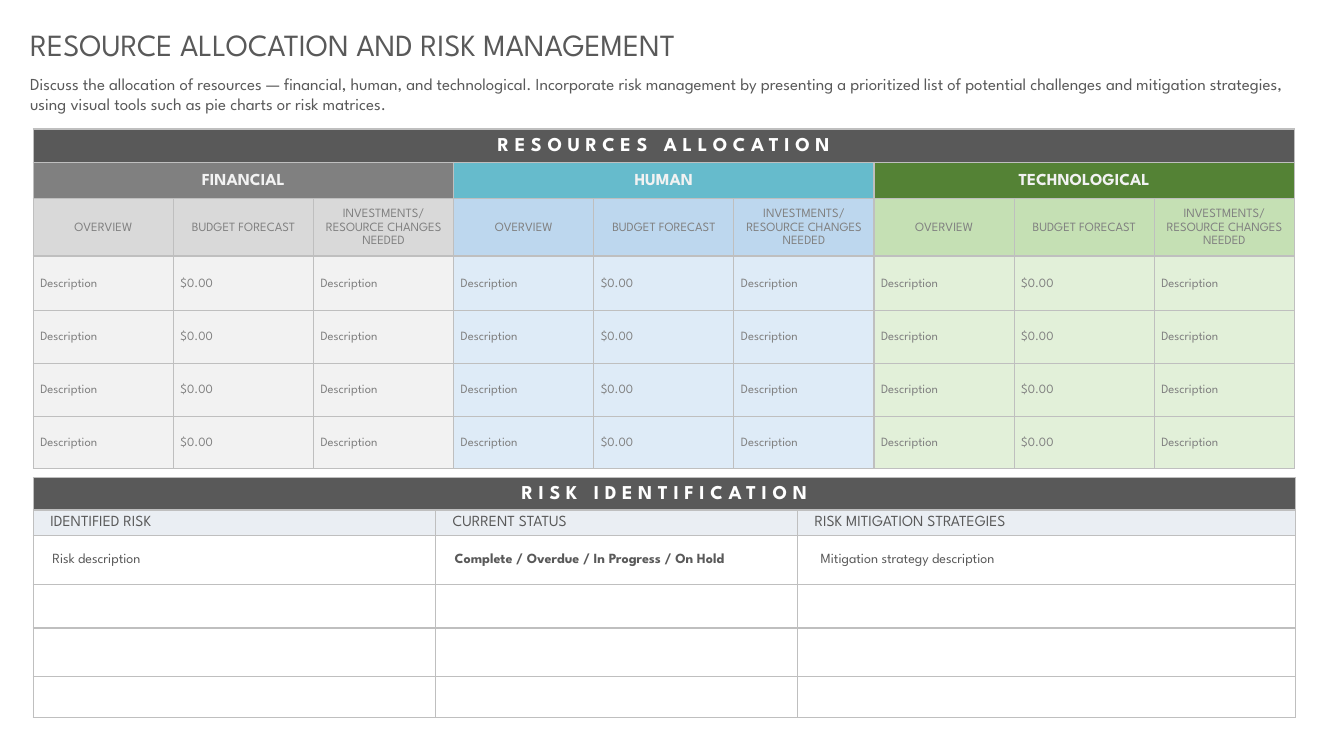
"""Build the resource allocation and risk management slide."""
from lxml.etree import SubElement
from pptx import Presentation
from pptx.dml.color import RGBColor
from pptx.enum.text import MSO_ANCHOR, PP_ALIGN
from pptx.oxml.ns import qn
from pptx.util import Pt

LEFT, CENTER = PP_ALIGN.LEFT, PP_ALIGN.CENTER
TOP, MIDDLE = MSO_ANCHOR.TOP, MSO_ANCHOR.MIDDLE
PX = 9144
FACE = "League Spartan"
DARK = RGBColor(0x59, 0x59, 0x59)
GRAY = RGBColor(0x80, 0x80, 0x80)
SILVER = RGBColor(0xD9, 0xD9, 0xD9)
PALE = RGBColor(0xF2, 0xF2, 0xF2)
TEAL = RGBColor(0x66, 0xBB, 0xCC)
BLUE = RGBColor(0xBD, 0xD7, 0xEE)
ICE = RGBColor(0xDE, 0xEB, 0xF7)
GREEN = RGBColor(0x54, 0x82, 0x35)
LEAF = RGBColor(0xC5, 0xE0, 0xB4)
MINT = RGBColor(0xE2, 0xF0, 0xD9)
MIST = RGBColor(0xEA, 0xEE, 0xF3)
RULE = RGBColor(0xBF, 0xBF, 0xBF)
WHITE = RGBColor(0xFF, 0xFF, 0xFF)

TITLE = "RESOURCE ALLOCATION AND RISK MANAGEMENT"
INTRO = (
    "Discuss the allocation of resources — financial, human, and technological. "
    "Incorporate risk management by presenting a prioritized list of potential "
    "challenges and mitigation strategies, using visual tools such as pie charts "
    "or risk matrices."
)
GROUPS = [
    ("FINANCIAL", GRAY, SILVER, PALE),
    ("HUMAN", TEAL, BLUE, ICE),
    ("TECHNOLOGICAL", GREEN, LEAF, MINT),
]
FIELDS = [
    ("OVERVIEW", "Description"),
    ("BUDGET FORECAST", "$0.00"),
    ("INVESTMENTS/\nRESOURCE CHANGES NEEDED", "Description"),
]
RISKS = [
    ("IDENTIFIED RISK", "Risk description", False, 14),
    ("CURRENT STATUS", "Complete / Overdue / In Progress / On Hold", True, 14),
    ("RISK MITIGATION STRATEGIES", "Mitigation strategy description", False, 18),
]
ASSET_COLS = [139] * 9
ASSET_ROWS = [33, 36, 57, 54, 53, 52, 52]
RISK_COLS = [399, 359, 494]
RISK_ROWS = [32, 25, 49, 43, 48, 41]


def write(frame, text, size=9, color=DARK, bold=False, align=LEFT,
          lead=None, track=0, indent=0):
    """Put formatted text in a text frame."""
    para = frame.paragraphs[0]
    para.text = text
    para.alignment = align
    if lead:
        para.line_spacing = lead
    if indent:
        para._p.get_or_add_pPr().set("indent", str(indent * PX))
    for run in para.runs:
        font = run.font
        font.name, font.size, font.bold = FACE, Pt(size), bold
        font.color.rgb = color
        if track:
            font._element.set("spc", str(track * 100))
    for gap in para._p.findall(qn("a:br")):
        SubElement(gap, qn("a:rPr"), sz=str(size * 100))


def place(shape, left, top, width, height, anchor):
    """Set the bounds and wrapping of a text shape."""
    shape.left, shape.top = left * PX, top * PX
    shape.width, shape.height = width * PX, height * PX
    frame = shape.text_frame
    frame.word_wrap = True
    frame.vertical_anchor = anchor
    return frame


def edge(cell):
    """Draw thin lines on all four sides of a cell."""
    props = cell._tc.get_or_add_tcPr()
    for side in ("a:lnL", "a:lnR", "a:lnT", "a:lnB"):
        line = SubElement(props, qn(side), w=str(Pt(1)))
        fill = SubElement(line, qn("a:solidFill"))
        SubElement(fill, qn("a:srgbClr"), val=str(RULE))


def grid(slide, top, cols, rows, pad):
    """Add a plain ruled table."""
    frame = slide.shapes.add_table(len(rows), len(cols), 33 * PX, top * PX,
                                   sum(cols) * PX, sum(rows) * PX)
    table = frame.table
    table.first_row = table.horz_banding = False
    for col, width in zip(table.columns, cols):
        col.width = width * PX
    for row, height in zip(table.rows, rows):
        row.height = height * PX
    for cell in table.iter_cells():
        edge(cell)
        cell.fill.background()
        cell.vertical_anchor = MIDDLE
        cell.margin_left = cell.margin_right = pad * PX
        cell.margin_top = cell.margin_bottom = 0
    return table


def fill(cell, text, back=None, **style):
    """Colour a cell and write its text."""
    if back is not None:
        cell.fill.solid()
        cell.fill.fore_color.rgb = back
    write(cell.text_frame, text, **style)


def banner(table, text):
    """Merge the first row into a dark heading."""
    head = table.cell(0, 0)
    head.merge(table.cell(0, len(table.columns) - 1))
    fill(head, text, DARK, size=14, color=WHITE, bold=True,
         align=CENTER, lead=1.15, track=4)


def assets(slide):
    """Add the resources table."""
    table = grid(slide, 128, ASSET_COLS, ASSET_ROWS, 7)
    banner(table, "RESOURCES ALLOCATION")
    span = len(FIELDS)
    for i, (name, deep, mid, light) in enumerate(GROUPS):
        start = i * span
        head = table.cell(1, start)
        head.merge(table.cell(1, start + span - 1))
        fill(head, name, deep, size=12, color=PALE, bold=True,
             align=CENTER, lead=1.15)
        for col, (label, value) in enumerate(FIELDS, start):
            fill(table.cell(2, col), label, mid, color=GRAY,
                 align=CENTER, lead=1.15)
            for row in range(3, len(ASSET_ROWS)):
                fill(table.cell(row, col), value, light, color=GRAY, lead=1.15)


def risks(slide):
    """Add the risk table."""
    table = grid(slide, 474, RISK_COLS, RISK_ROWS, 5)
    banner(table, "RISK IDENTIFICATION")
    for col, (label, value, bold, indent) in enumerate(RISKS):
        fill(table.cell(1, col), label, MIST, size=11, lead=1.07, indent=12)
        fill(table.cell(2, col), value, size=10, bold=bold,
             lead=1.07, indent=indent)


def main():
    """Build and save the slide."""
    deck = Presentation()
    deck.slide_width, deck.slide_height = 1333 * PX, 750 * PX
    slide = deck.slides.add_slide(deck.slide_layouts[5])
    write(place(slide.shapes.title, 20, 21, 914, 47, TOP), TITLE, size=22)
    intro = slide.shapes.add_textbox(0, 0, 0, 0)
    write(place(intro, 20, 68, 1293, 50, TOP), INTRO, size=12)
    assets(slide)
    risks(slide)
    deck.save("out.pptx")


if __name__ == "__main__":
    main()
